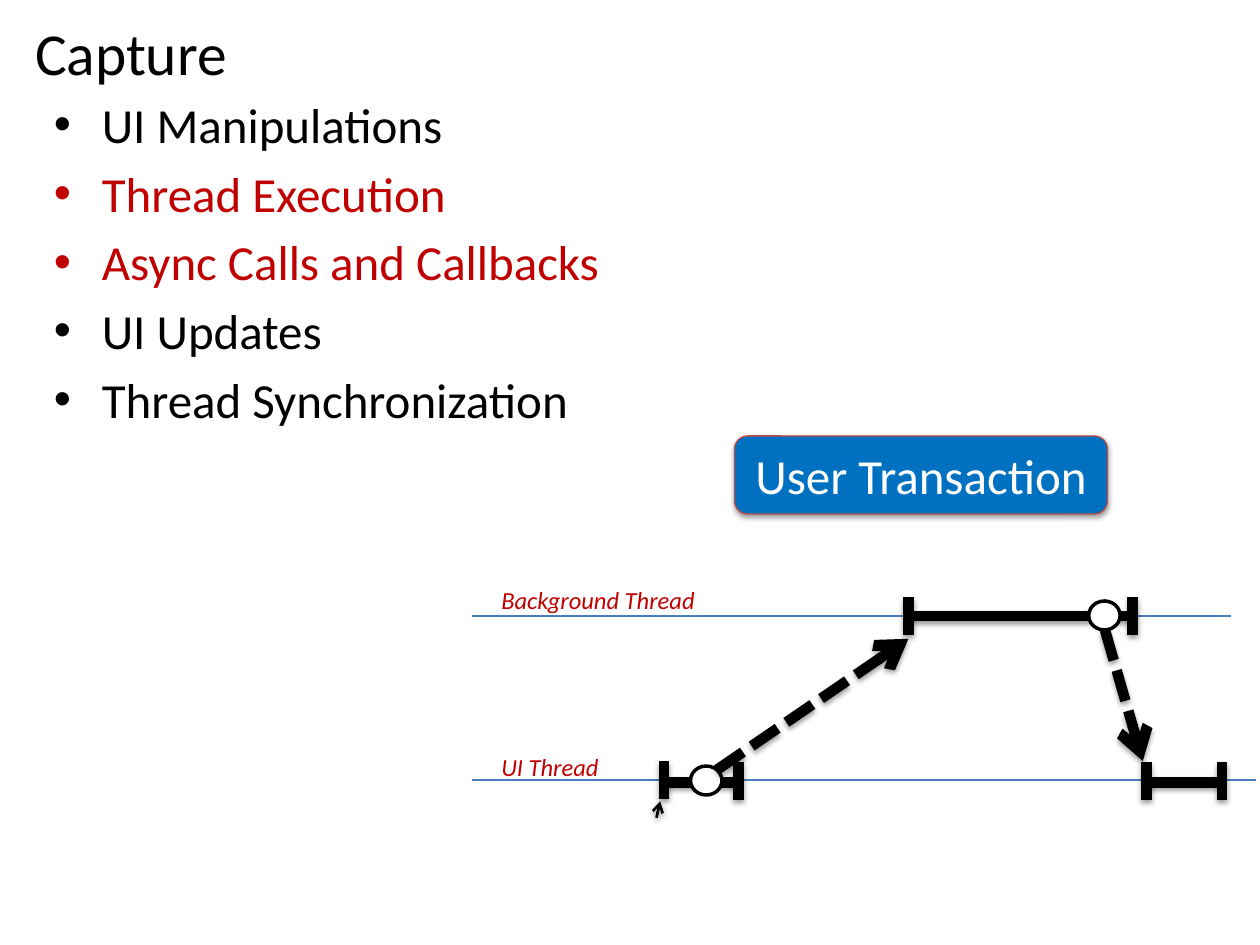
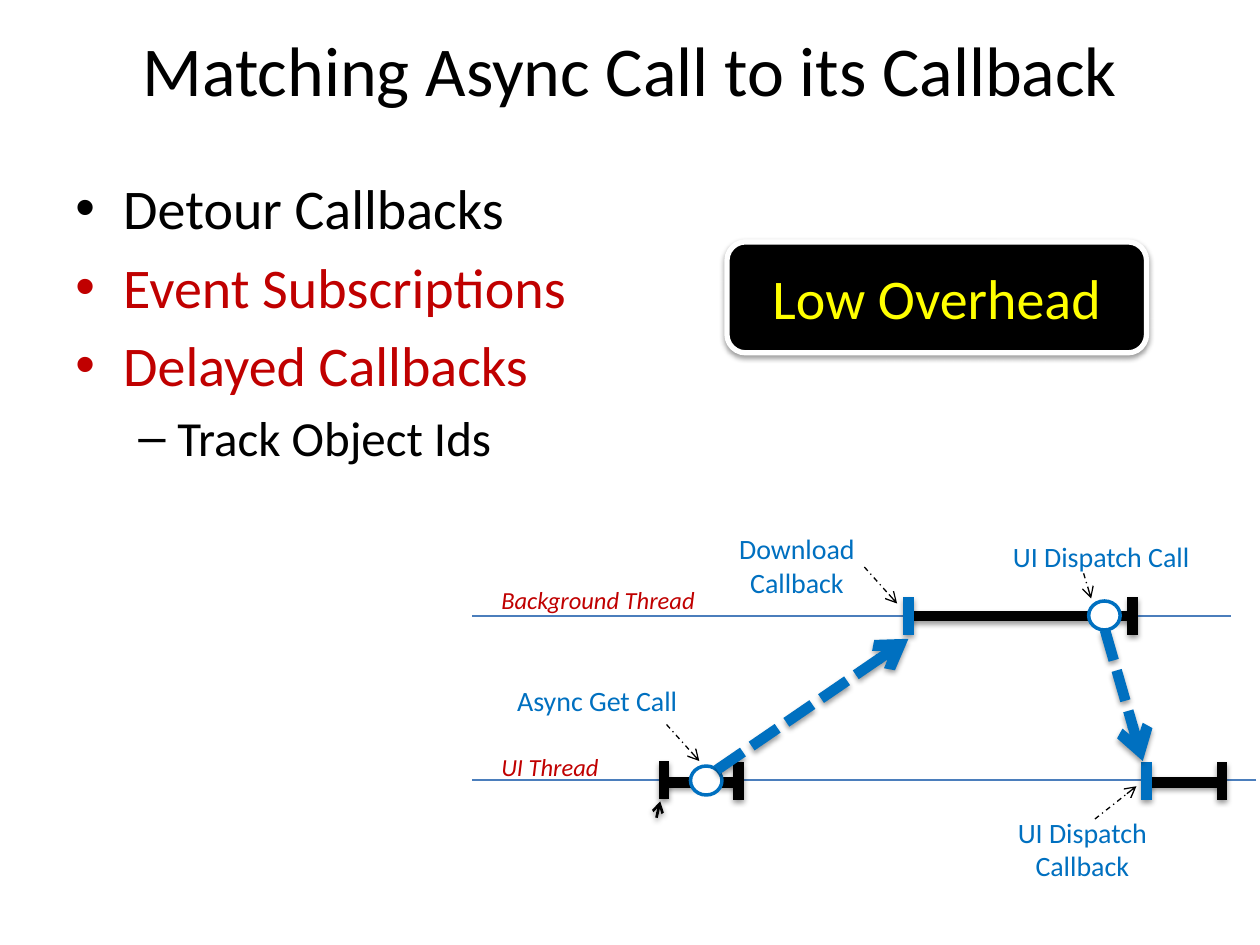
from lxml import etree
from pptx import Presentation
from pptx.dml.color import RGBColor
from pptx.enum.dml import MSO_LINE
from pptx.enum.shapes import MSO_CONNECTOR, MSO_SHAPE
from pptx.enum.text import MSO_ANCHOR, PP_ALIGN
from pptx.oxml.ns import qn
from pptx.util import Inches, Pt

STRAIGHT = MSO_CONNECTOR.STRAIGHT
ROUNDED, ELLIPSE = MSO_SHAPE.ROUNDED_RECTANGLE, MSO_SHAPE.OVAL
DOTTED, DASH_DOT = MSO_LINE.SQUARE_DOT, MSO_LINE.DASH_DOT
LEFT, CENTER = PP_ALIGN.LEFT, PP_ALIGN.CENTER
TOP, MIDDLE = MSO_ANCHOR.TOP, MSO_ANCHOR.MIDDLE

FONT = "Calibri"
BLACK, WHITE, RED, BLUE = "000000", "FFFFFF", "C00000", "0070C0"
THREAD_LINE, BUTTON_LINE, YELLOW = "4B7EBC", "BF4C48", "FFFF00"

BACKGROUND_Y, UI_Y = 4.89, 6.19
BAR_HALF = 0.15
# Bullet character, left margin and hanging indent by level
BULLETS = [("•", 0.38, 0.38), ("–", 0.81, 0.31)]


def rgb(color):
    return RGBColor.from_string(color)


def add_child(parent, tag, **attributes):
    return etree.SubElement(parent, qn(tag), attributes)


def set_effect(shape, shadow):
    """Give the shape a soft shadow below it, or no shadow at all."""
    effects = add_child(shape._element.spPr, "a:effectLst")
    if shadow:
        outer = add_child(effects, "a:outerShdw", blurRad=str(Pt(3.1)), dist=str(Pt(1.6)),
                          dir="5400000", rotWithShape="0")
        color = add_child(outer, "a:srgbClr", val=BLACK)
        add_child(color, "a:alpha", val="38000")


def format_paragraph(paragraph, size, color, align=LEFT, italic=False):
    paragraph.alignment = align
    for run in paragraph.runs:
        run.font.name = FONT
        run.font.size = Pt(size)
        run.font.italic = italic
        run.font.color.rgb = rgb(color)


def add_text(slide, box, text, size, color, align=LEFT, italic=False, wrap=False, anchor=TOP):
    text_frame = slide.shapes.add_textbox(*map(Inches, box)).text_frame
    text_frame.word_wrap = wrap
    text_frame.vertical_anchor = anchor
    text_frame.text = text
    for paragraph in text_frame.paragraphs:
        format_paragraph(paragraph, size, color, align, italic)


def add_bullets(slide, box, items):
    """Add a list of (text, size, color, level) items."""
    text_frame = slide.shapes.add_textbox(*map(Inches, box)).text_frame
    text_frame.word_wrap = True
    text_frame.text = "\n".join(item[0] for item in items)
    for paragraph, (_, size, color, level) in zip(text_frame.paragraphs, items):
        format_paragraph(paragraph, size, color)
        paragraph.level = level
        character, margin, hanging = BULLETS[level]
        properties = paragraph._p.get_or_add_pPr()
        properties.set("marL", str(Inches(margin)))
        properties.set("indent", str(-Inches(hanging)))
        spacing = add_child(properties, "a:spcBef")
        add_child(spacing, "a:spcPct", val="20000")
        add_child(properties, "a:buFont", typeface="Arial")
        add_child(properties, "a:buChar", char=character)


def add_shape(slide, kind, box, fill, line, width, shadow=False):
    shape = slide.shapes.add_shape(kind, *map(Inches, box))
    shape.fill.solid()
    shape.fill.fore_color.rgb = rgb(fill)
    shape.line.color.rgb = rgb(line)
    shape.line.width = Pt(width)
    set_effect(shape, shadow)
    return shape


def add_button(slide, box, text, size, color, fill, line, width):
    button = add_shape(slide, ROUNDED, box, fill, line, width, shadow=True)
    text_frame = button.text_frame
    text_frame.vertical_anchor = MIDDLE
    text_frame.text = text
    format_paragraph(text_frame.paragraphs[0], size, color, CENTER)


def add_line(slide, start, end, color=BLACK, width=6, dash=None, arrow=False, shadow=True):
    connector = slide.shapes.add_connector(STRAIGHT, *map(Inches, (*start, *end)))
    connector.line.color.rgb = rgb(color)
    connector.line.width = Pt(width)
    if dash:
        connector.line.dash_style = dash
    if arrow:
        add_child(connector.line._get_or_add_ln(), "a:tailEnd", type="arrow")
    set_effect(connector, shadow)


def add_bar(slide, x, y, color=BLACK):
    """Mark where a stretch of thread execution starts or ends."""
    add_line(slide, (x, y - BAR_HALF), (x, y + BAR_HALF), color)


def add_thread_diagram(slide, accent):
    """Draw both threads, with async calls and callbacks in the accent color."""
    for y, right in ((BACKGROUND_Y, 9.77), (UI_Y, 9.97)):
        add_line(slide, (right, y), (3.75, y), THREAD_LINE, 0.75, shadow=False)
    for left, right, y in ((5.29, 5.86, 6.21), (9.1, 9.68, 6.21), (7.2, 8.99, BACKGROUND_Y)):
        add_line(slide, (left, y), (right, y))
    for x, y in ((5.27, UI_Y), (5.86, 6.2), (9.7, 6.2), (8.99, BACKGROUND_Y)):
        add_bar(slide, x, y)
    for x, y in ((9.1, 6.2), (7.21, BACKGROUND_Y)):
        add_bar(slide, x, y, accent)
    add_line(slide, (5.21, 6.49), (5.24, 6.36), width=1.5, arrow=True)
    for x, y in ((5.48, 6.08), (8.64, 4.77)):
        add_shape(slide, ELLIPSE, (x, y, 0.25, 0.23), WHITE, accent, 2)
    for start, end in (((5.69, 6.11), (7.21, 5.07)), ((8.77, 5), (9.07, 6.04))):
        add_line(slide, start, end, accent, dash=DOTTED, arrow=True)
    add_text(slide, (3.88, 5.92, 0.99, 0.34), "UI Thread", 14, RED, italic=True)
    add_text(slide, (3.88, 4.59, 1.78, 0.34), "Background Thread", 14, RED, italic=True)


def add_callout(slide, box, text, start, end):
    add_text(slide, box, text, 16, BLUE, CENTER)
    add_line(slide, start, end, width=0.75, dash=DASH_DOT, arrow=True, shadow=False)


def build_capture(slide):
    add_bullets(slide, (0.33, 0.7, 6.58, 3.05), [
        ("UI Manipulations", 28, BLACK, 0),
        ("Thread Execution", 28, RED, 0),
        ("Async Calls and Callbacks", 28, RED, 0),
        ("UI Updates", 28, BLACK, 0),
        ("Thread Synchronization", 28, BLACK, 0),
    ])
    add_text(slide, (0.18, 0.08, 1.74, 0.67), "Capture", 34, BLACK)
    add_button(slide, (5.83, 3.46, 2.96, 0.62), "User Transaction", 28, WHITE,
               BLUE, BUTTON_LINE, 0.75)
    add_thread_diagram(slide, BLACK)


def build_matching(slide):
    add_bullets(slide, (0.5, 1.33, 9, 2.5), [
        ("Detour Callbacks", 32, BLACK, 0),
        ("Event Subscriptions", 32, RED, 0),
        ("Delayed Callbacks", 32, RED, 0),
        ("Track Object Ids", 28, BLACK, 1),
    ])
    add_text(slide, (0.5, 0.17, 9, 0.75), "Matching Async Call to its Callback", 40, BLACK,
             CENTER, wrap=True, anchor=MIDDLE)
    add_button(slide, (5.77, 1.92, 3.33, 0.88), "Low Overhead", 32, YELLOW, BLACK, WHITE, 3)
    add_callout(slide, (3.98, 5.38, 1.52, 0.37), "Async Get Call", (5.29, 5.75), (5.55, 6.04))
    add_callout(slide, (5.75, 4.17, 1.15, 0.64), "Download\nCallback", (6.86, 4.5), (7.12, 4.79))
    add_callout(slide, (7.91, 4.23, 1.66, 0.37), "UI Dispatch Call", (8.6, 4.55), (8.66, 4.75))
    add_callout(slide, (7.93, 6.42, 1.32, 0.64), "UI Dispatch\nCallback",
                (8.69, 6.5), (9.02, 6.24))
    add_thread_diagram(slide, BLUE)


def main():
    presentation = Presentation()
    presentation.slide_width = Inches(10)
    presentation.slide_height = Inches(7.5)
    blank = presentation.slide_layouts[6]
    for build in (build_capture, build_matching):
        build(presentation.slides.add_slide(blank))
    presentation.save("out.pptx")


if __name__ == "__main__":
    main()
